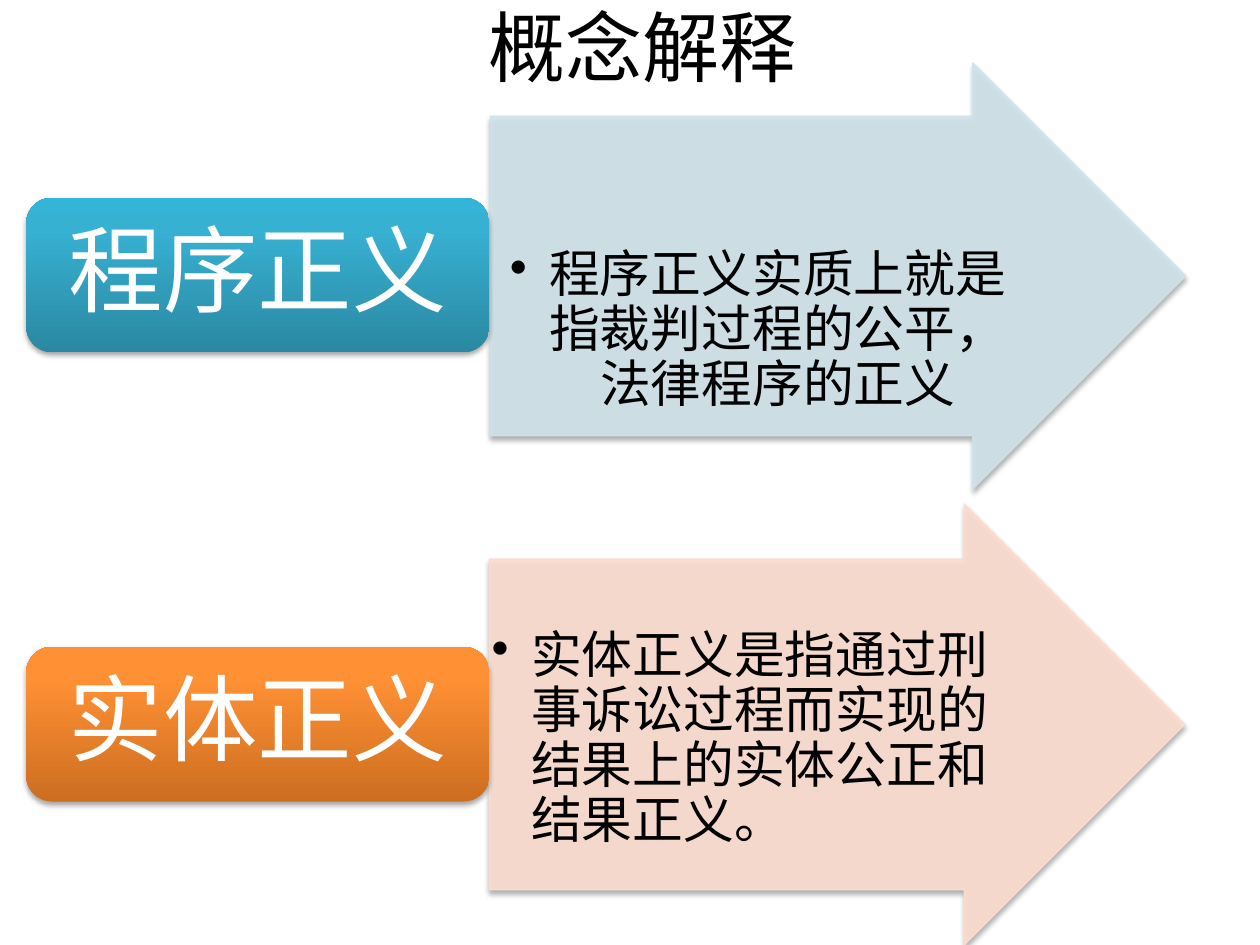
from copy import deepcopy

from lxml import etree
from pptx import Presentation
from pptx.dml.color import RGBColor
from pptx.enum.shapes import MSO_SHAPE
from pptx.enum.text import MSO_ANCHOR, PP_ALIGN
from pptx.oxml.ns import qn
from pptx.util import Pt

RIGHT_ARROW = MSO_SHAPE.RIGHT_ARROW
ROUNDED = MSO_SHAPE.ROUNDED_RECTANGLE
TOP, MIDDLE = MSO_ANCHOR.TOP, MSO_ANCHOR.MIDDLE
LEFT, CENTER = PP_ALIGN.LEFT, PP_ALIGN.CENTER

BLACK = RGBColor(0x00, 0x00, 0x00)
WHITE = RGBColor(0xFF, 0xFF, 0xFF)
PALE_BLUE = RGBColor(0xD0, 0xE3, 0xEA)
PALE_ORANGE = RGBColor(0xFC, 0xDD, 0xCF)
BLUES = [RGBColor(0x2A, 0x88, 0xA2), RGBColor(0x37, 0xB1, 0xD2),
         RGBColor(0x34, 0xB4, 0xD6)]
ORANGES = [RGBColor(0xCC, 0x6E, 0x20), RGBColor(0xFF, 0x90, 0x34),
           RGBColor(0xFF, 0x91, 0x36)]
STOP_POSITIONS = [0, 0.8, 1]


def add_shadowed_shape(kind, left, top, width, height):
    shape = slide.shapes.add_shape(kind, Pt(left), Pt(top), Pt(width), Pt(height))
    shape.shadow.inherit = False
    effects = shape._element.spPr.find(qn("a:effectLst"))
    shadow = etree.SubElement(effects, qn("a:outerShdw"), blurRad=str(Pt(3.1)),
                              dist=str(Pt(1.8)), dir="5400000", rotWithShape="0")
    color = etree.SubElement(shadow, qn("a:srgbClr"), val="000000")
    etree.SubElement(color, qn("a:alpha"), val="35000")
    return shape


def write_text(shape, text, size, color, frame_format, paragraph_format):
    frame = shape.text_frame
    for name, value in frame_format.items():
        setattr(frame, name, value)
    paragraph = frame.paragraphs[0]
    paragraph.text = text
    for name, value in paragraph_format.items():
        setattr(paragraph, name, value)
    font = paragraph.runs[0].font
    font.name, font.size = "Calibri", Pt(size)
    font.color.rgb = color
    return paragraph


presentation = Presentation()
presentation.slide_width, presentation.slide_height = Pt(720), Pt(540)
slide = presentation.slides.add_slide(presentation.slide_layouts[5])

# Title
title = slide.shapes.title
title.left, title.top, title.width, title.height = Pt(43.5), Pt(-13.7), Pt(648), Pt(79.2)
write_text(title, "概念解释", 44, BLACK, {"vertical_anchor": MIDDLE}, {"alignment": CENTER})

# One row per concept: a definition arrow and its label
rows = [
    {"term": "程序正义", "label_top": 113, "gradient": BLUES,
     "arrow": (280.2, 36, 397.4, 243.4), "pale": PALE_BLUE,
     "definition": "程序正义实质上就是指裁判过程的公平，法律程序的正义",
     "alignment": CENTER, "margin_top": 75.7},
    {"term": "实体正义", "label_top": 369.6, "gradient": ORANGES,
     "arrow": (279.6, 288, 397.4, 252), "pale": PALE_ORANGE,
     "definition": "实体正义是指通过刑事诉讼过程而实现的结果上的实体公正和结果正义。",
     "alignment": LEFT, "margin_top": 40.4},
]
for row in rows:
    # Translucent arrow with the definition
    arrow = add_shadowed_shape(RIGHT_ARROW, *row["arrow"])
    arrow.adjustments[0], arrow.adjustments[1] = 0.75, 0.5
    arrow.fill.solid()
    arrow.fill.fore_color.rgb = row["pale"]
    arrow.line.color.rgb = row["pale"]
    arrow.line.width = Pt(0.75)
    for fill in arrow._element.spPr.iter(qn("a:solidFill")):
        etree.SubElement(fill[0], qn("a:alpha"), val="90000")
    paragraph = write_text(
        arrow, row["definition"], 29, BLACK,
        {"word_wrap": True, "vertical_anchor": TOP,
         "margin_left": Pt(1.4), "margin_right": Pt(1.4),
         "margin_top": Pt(row["margin_top"]), "margin_bottom": Pt(1.4)},
        {"alignment": row["alignment"], "line_spacing": 0.9})
    properties = paragraph._p.get_or_add_pPr()
    properties.set("marL", str(Pt(22.5)))
    properties.set("indent", str(Pt(-22.5)))
    etree.SubElement(properties, qn("a:buChar"), char="•")

    # Gradient label with the term
    label = add_shadowed_shape(ROUNDED, 15, row["label_top"], 264.6, 88.4)
    label.line.fill.background()
    label.fill.gradient()
    label.fill.gradient_angle = 90
    stop_list = label._element.spPr.find(qn("a:gradFill")).find(qn("a:gsLst"))
    stop_list.insert(1, deepcopy(stop_list[0]))
    for stop, position, color in zip(label.fill.gradient_stops, STOP_POSITIONS,
                                     row["gradient"]):
        stop.position = position
        stop.color.rgb = color
    write_text(
        label, row["term"], 54, WHITE,
        {"word_wrap": True, "vertical_anchor": MIDDLE,
         "margin_left": Pt(16.2), "margin_right": Pt(16.2),
         "margin_top": Pt(8), "margin_bottom": Pt(8)},
        {"alignment": CENTER, "line_spacing": 0.9})

presentation.save("out.pptx")
